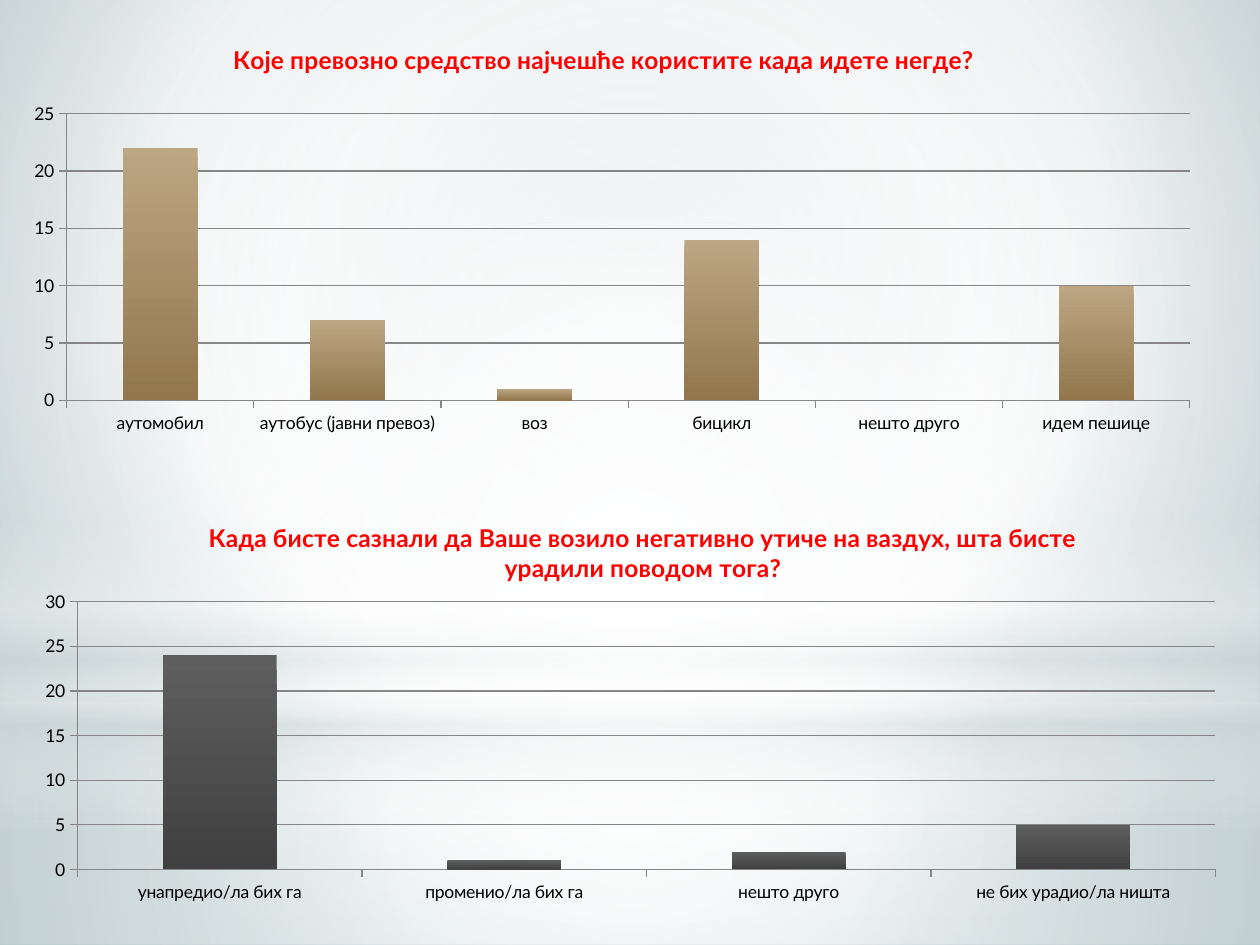
import pptx
import pptx.chart.data
import pptx.dml.color
import pptx.enum.chart
import pptx.enum.shapes
import pptx.oxml
import pptx.oxml.ns
import pptx.util
from dataclasses import dataclass

Inches, Pt = pptx.util.Inches, pptx.util.Pt
RGB = pptx.dml.color.RGBColor.from_string
qn = pptx.oxml.ns.qn


@dataclass(frozen=True)
class Theme:
    font: str = "Lato"
    text: str = "000000"
    title: str = "FF0000"
    grid: str = "868686"
    white: str = "FFFFFF"
    mist: str = "CDD7D9"
    sky: str = "C2D0D3"
    sea: str = "9AB5BA"
    tan: tuple = ("BCA683", "92774C")
    charcoal: tuple = ("5E5E5E", "404040")
    label_size: int = 10
    title_size: int = 14


theme = Theme()
CENTRE = (50, 50, 50, 50)


def set_gradient(fill, owner, stops, focus=None):
    """Stops are (position %, colour, opacity %); focus is l, t, r, b % of a circular
    gradient, and without it the gradient runs straight down."""
    fill.gradient()
    gradient = owner.find(".//" + qn("a:gradFill"))
    for child in list(gradient):
        gradient.remove(child)
    stop_xml = "".join(
        f'<a:gs pos="{pos * 1000}"><a:srgbClr val="{colour}">'
        f'<a:alpha val="{opacity * 1000}"/></a:srgbClr></a:gs>'
        for pos, colour, opacity in stops)
    if focus:
        edges = " ".join(f'{side}="{value * 1000}"' for side, value in zip("ltrb", focus))
        direction = f'<a:path path="circle"><a:fillToRect {edges}/></a:path>'
    else:
        direction = '<a:lin ang="5400000" scaled="0"/>'
    parsed = pptx.oxml.parse_xml(
        f'<a:gradFill {pptx.oxml.ns.nsdecls("a")}><a:gsLst>{stop_xml}</a:gsLst>{direction}</a:gradFill>')
    gradient.extend(list(parsed))


def set_layout(owner, index, **places):
    """Place a chart part by fractions of the chart's size."""
    for old in owner.findall(qn("c:layout")):
        owner.remove(old)
    target = '<c:layoutTarget val="inner"/>' if "w" in places else ""
    modes = "".join(f'<c:{key}Mode val="edge"/>' for key in "xy")
    values = "".join(f'<c:{key} val="{value}"/>' for key, value in places.items())
    owner.insert(index, pptx.oxml.parse_xml(
        f'<c:layout {pptx.oxml.ns.nsdecls("c")}><c:manualLayout>{target}{modes}{values}'
        '</c:manualLayout></c:layout>'))


deck = pptx.Presentation()
deck.slide_width, deck.slide_height = Inches(10), Inches(7.5)
slide = deck.slides.add_slide(deck.slide_layouts[6])

# Backdrop
set_gradient(slide.background.fill, slide.element,
             [(0, theme.sky, 100), (60, theme.white, 100), (100, theme.sea, 100)],
             (20, 10, 20, 60))
RECTANGLE = pptx.enum.shapes.MSO_SHAPE.RECTANGLE
OVAL = pptx.enum.shapes.MSO_SHAPE.OVAL
glows = [
    (RECTANGLE, 5.58, 1.92, CENTRE,
     [(0, theme.white, 91), (37, theme.white, 76), (100, theme.mist, 79)]),
    (RECTANGLE, 0, 5.58, CENTRE,
     [(0, theme.white, 89), (48, theme.white, 62), (100, theme.mist, 79)]),
    (RECTANGLE, 4.12, 2.5, None,
     [(0, theme.white, 0), (29, theme.white, 30), (45, theme.mist, 40),
      (55, theme.white, 26), (65, theme.mist, 60), (100, theme.white, 0)]),
    (OVAL, 1.75, 5.58, CENTRE, [(0, theme.white, 100), (56, theme.white, 0)]),
]
for outline, top, height, focus, stops in glows:
    glow = slide.shapes.add_shape(outline, 0, Inches(top), deck.slide_width, Inches(height))
    glow.shadow.inherit = False
    glow.line.fill.background()
    set_gradient(glow.fill, glow.element, stops, focus)

# Survey questions
questions = [
    dict(title="Које превозно средство најчешће користите када идете негде?",
         answers={"аутомобил": 22, "аутобус (јавни превоз)": 7, "воз": 1,
                  "бицикл": 14, "нешто друго": 0, "идем пешице": 10},
         top=0, height=3.67, bars=theme.tan, maximum=25,
         title_at=dict(x=0.17, y=0.08), plot_at=dict(x=0.037, y=0.246, w=0.922, h=0.62)),
    dict(title="Када бисте сазнали да Ваше возило негативно утиче на ваздух, "
               "шта бисте урадили поводом тога?",
         answers={"унапредио/ла бих га": 24, "променио/ла бих га": 1,
                  "нешто друго": 2, "не бих урадио/ла ништа": 5},
         top=3.92, height=3.32, bars=theme.charcoal, maximum=30,
         title_at=dict(x=0.15, y=0.05), plot_at=dict(x=0.046, y=0.258, w=0.934, h=0.64)),
]
for question in questions:
    survey = pptx.chart.data.CategoryChartData()
    survey.categories = list(question["answers"])
    survey.add_series("Series 1", list(question["answers"].values()))
    chart = slide.shapes.add_chart(
        pptx.enum.chart.XL_CHART_TYPE.COLUMN_CLUSTERED, Inches(0.17), Inches(question["top"]),
        Inches(9.67), Inches(question["height"]), survey).chart
    chart.has_legend = False
    chart.font.name = theme.font
    chart.font.size = Pt(theme.label_size)
    chart.font.color.rgb = RGB(theme.text)

    chart.has_title = True
    heading = chart.chart_title.text_frame
    heading.text = question["title"]
    heading_font = heading.paragraphs[0].runs[0].font
    heading_font.name = theme.font
    heading_font.size = Pt(theme.title_size)
    heading_font.bold = True
    heading_font.color.rgb = RGB(theme.title)
    set_layout(chart.chart_title._element, 1, **question["title_at"])
    set_layout(chart._chartSpace.find(".//" + qn("c:plotArea")), 0, **question["plot_at"])

    counts = chart.value_axis
    counts.minimum_scale, counts.maximum_scale, counts.major_unit = 0, question["maximum"], 5
    counts.has_major_gridlines = True
    for axis in (chart.category_axis, counts):
        axis.major_tick_mark = pptx.enum.chart.XL_TICK_MARK.OUTSIDE
        axis.minor_tick_mark = pptx.enum.chart.XL_TICK_MARK.NONE
    for line in (chart.category_axis.format.line, counts.format.line,
                 counts.major_gridlines.format.line):
        line.color.rgb = RGB(theme.grid)
        line.width = Pt(0.75)

    plot = chart.plots[0]
    plot.gap_width = 150
    plot.vary_by_categories = False
    series = plot.series[0]
    light, dark = question["bars"]
    set_gradient(series.format.fill, series._element, [(0, light, 100), (100, dark, 100)])

deck.save("out.pptx")
